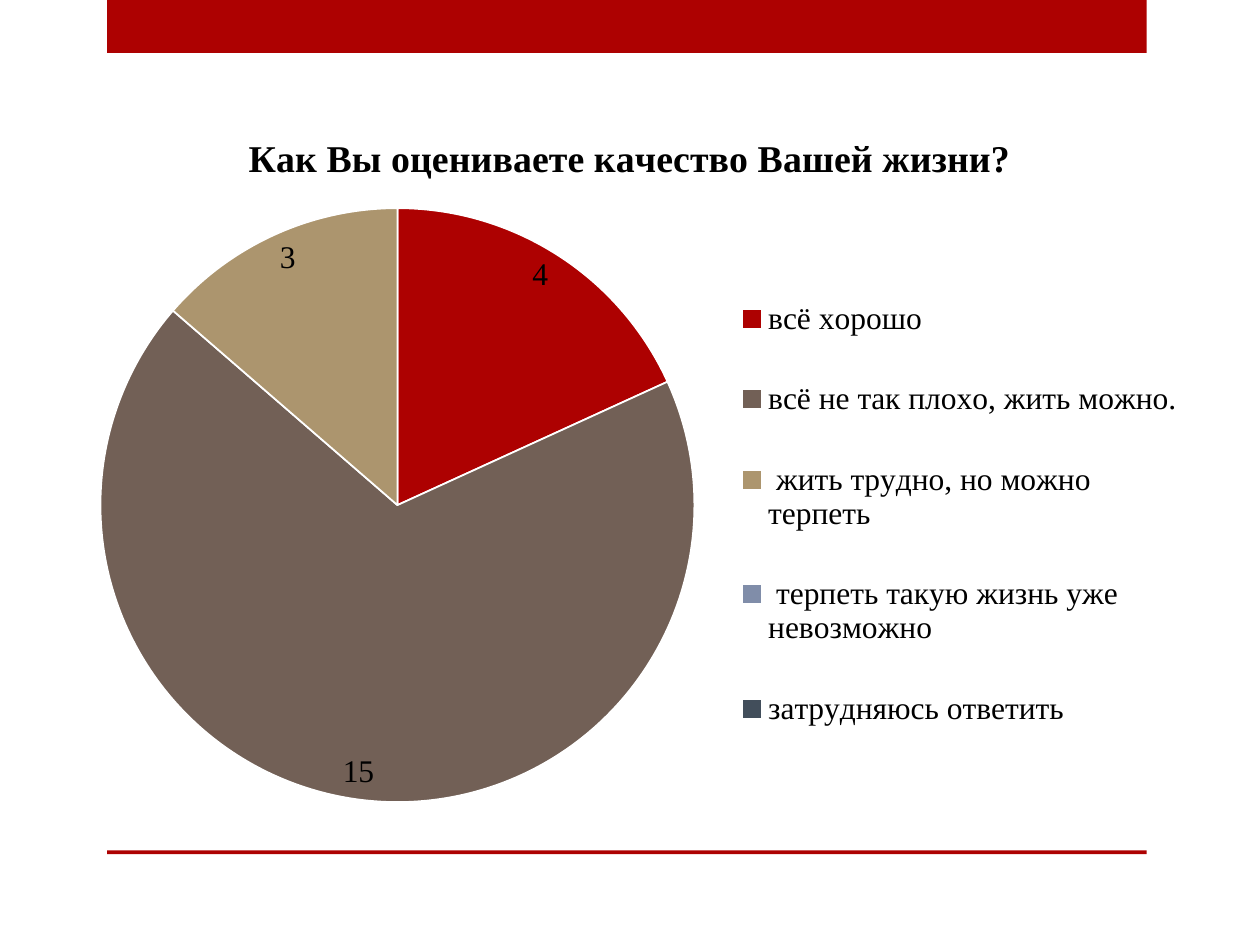
from lxml import etree
from pptx import Presentation
from pptx.chart.data import CategoryChartData
from pptx.dml.color import RGBColor
from pptx.enum.chart import XL_CHART_TYPE, XL_LABEL_POSITION, XL_LEGEND_POSITION
from pptx.enum.shapes import MSO_SHAPE
from pptx.oxml.ns import qn
from pptx.util import Inches, Pt

PIE = XL_CHART_TYPE.PIE
BEST_FIT = XL_LABEL_POSITION.BEST_FIT
LEGEND_RIGHT = XL_LEGEND_POSITION.RIGHT
RECT = MSO_SHAPE.RECTANGLE

FONT = "Times New Roman"
COLORS = {
    "red": "AD0101",
    "brown": "726056",
    "tan": "AC956E",
    "blue": "808DA9",
    "slate": "424E5B",
    "text": "000000",
    "edge": "FFFFFF",
}
TITLE = "Как Вы оцениваете качество Вашей жизни?"
ANSWERS = [
    ("всё хорошо", 4, "red"),
    ("всё не так плохо, жить можно.", 15, "brown"),
    (" жить трудно, но можно терпеть", 3, "tan"),
    (" терпеть такую жизнь уже невозможно", None, "blue"),
    ("затрудняюсь ответить", None, "slate"),
]
BODY = {"name": FONT, "size": Pt(18), "bold": False}
HEADING = {"name": FONT, "size": Pt(21.6), "bold": True}


def rgb(name):
    return RGBColor.from_string(COLORS[name])


def set_font(font, style):
    for key, value in style.items():
        setattr(font, key, value)
    font.color.rgb = rgb("text")


def add_band(slide, top, height):
    sp = slide.shapes.add_shape(RECT, Inches(0.85), Inches(top), Inches(8.25), Inches(height))
    sp.shadow.inherit = False
    sp.fill.solid()
    sp.fill.fore_color.rgb = rgb("red")
    sp.line.fill.background()


def make_layout(x, y, w, h, inner=False):
    """Return a manual c:layout element given in fractions of the chart."""
    layout = etree.Element(qn("c:layout"))
    manual = etree.SubElement(layout, qn("c:manualLayout"))
    values = {"layoutTarget": "inner"} if inner else {}
    values.update(xMode="edge", yMode="edge", x=x, y=y, w=w, h=h)
    for tag, value in values.items():
        etree.SubElement(manual, qn(f"c:{tag}")).set("val", str(value))
    return layout


def place_parts(chart):
    """Fix the places of the pie and the legend."""
    plot_area = chart._chartSpace.find(".//" + qn("c:plotArea"))
    legend = chart._chartSpace.find(".//" + qn("c:legend"))
    for parent in (plot_area, legend):
        for old in parent.findall(qn("c:layout")):
            parent.remove(old)
    plot_area.insert(0, make_layout(0.032, 0.143, 0.525, 0.832, inner=True))
    legend.find(qn("c:legendPos")).addnext(make_layout(0.6, 0.209, 0.39, 0.724))


def add_pie(slide):
    data = CategoryChartData()
    data.categories = [label for label, _, _ in ANSWERS]
    data.add_series("Series 1", [count for _, count, _ in ANSWERS])
    chart = slide.shapes.add_chart(
        PIE, Inches(0.51), Inches(0.84), Inches(8.98), Inches(5.67), data
    ).chart
    set_font(chart.font, BODY)

    chart.has_title = True
    p = chart.chart_title.text_frame.paragraphs[0]
    r = p.add_run()
    r.text = TITLE
    set_font(r.font, HEADING)

    chart.has_legend = True
    chart.legend.position = LEGEND_RIGHT
    chart.legend.include_in_layout = False
    set_font(chart.legend.font, BODY)

    plot = chart.plots[0]
    plot.vary_by_categories = True
    plot.has_data_labels = True
    labels = plot.data_labels
    labels.show_value = True
    labels.show_percentage = False
    labels.position = BEST_FIT
    set_font(labels.font, BODY)

    for i, (_, _, color) in enumerate(ANSWERS):
        fmt = plot.series[0].points[i].format
        fmt.fill.solid()
        fmt.fill.fore_color.rgb = rgb(color)
        fmt.line.color.rgb = rgb("edge")
        fmt.line.width = Pt(1)
    place_parts(chart)


def main():
    prs = Presentation()
    prs.slide_width, prs.slide_height = Inches(10), Inches(7.5)
    slide = prs.slides.add_slide(prs.slide_layouts[6])
    add_band(slide, 0, 0.42)
    add_band(slide, 6.75, 0.03)
    add_pie(slide)
    prs.save("out.pptx")


if __name__ == "__main__":
    main()
